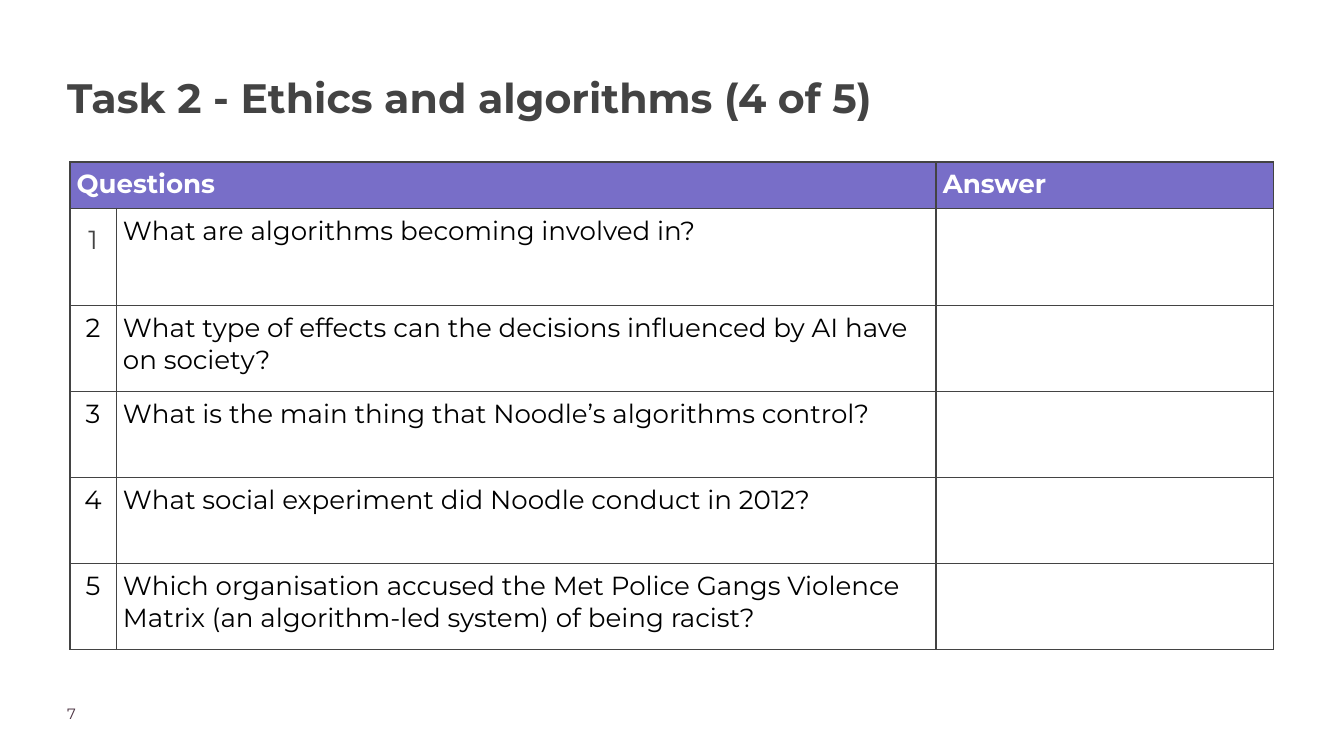
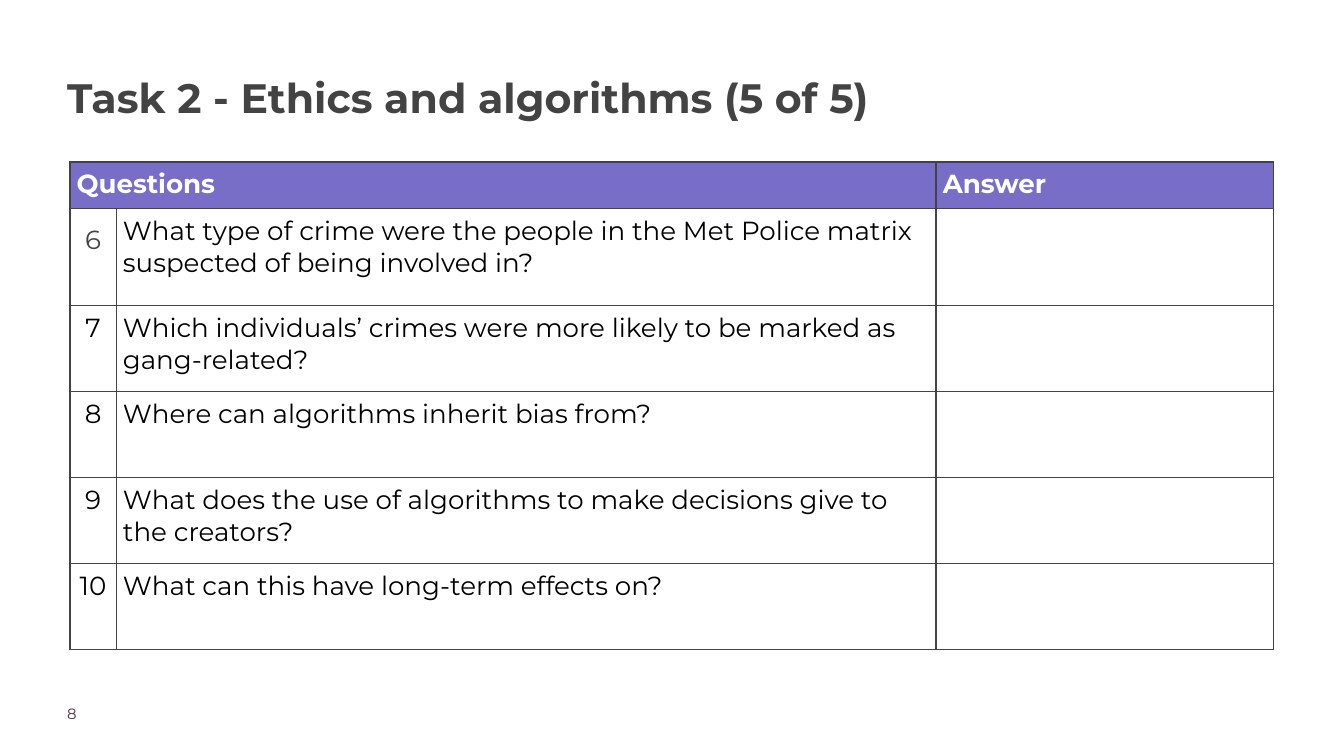
from pptx import Presentation
from pptx.dml.color import RGBColor
from pptx.enum.text import MSO_ANCHOR, MSO_AUTO_SIZE, PP_ALIGN
from pptx.oxml import parse_xml
from pptx.oxml.ns import nsdecls
from pptx.util import Inches, Pt

FONT = "Montserrat"
DARK, PLUM, PURPLE, WHITE, BLACK = "434343", "4B3241", "786EC8", "FFFFFF", "000000"
COLS = [0.69, 12.2, 5.02]
ROWS = [0.69, 1.45] + [1.28] * 4

SLIDES = [
    ("Task 2 - Ethics and algorithms (4 of 5)", 7, 1, [
        "What are algorithms becoming involved in?",
        "What type of effects can the decisions influenced by AI have on society?",
        "What is the main thing that Noodle’s algorithms control?",
        "What social experiment did Noodle conduct in 2012?",
        "Which organisation accused the Met Police Gangs Violence Matrix "
        "(an algorithm-led system) of being racist?",
    ]),
    ("Task 2 - Ethics and algorithms (5 of 5)", 8, 6, [
        "What type of crime were the people in the Met Police matrix "
        "suspected of being involved in?",
        "Which individuals’ crimes were more likely to be marked as gang-related?",
        "Where can algorithms inherit bias from?",
        "What does the use of algorithms to make decisions give to the creators?",
        "What can this have long-term effects on?",
    ]),
]


def add_text(tf, text, size, color, bold=False, align=PP_ALIGN.LEFT, spacing=1.0):
    tf.word_wrap = True
    p = tf.paragraphs[0]
    p.alignment = align
    p.line_spacing = spacing
    r = p.add_run()
    r.text = text
    r.font.name = FONT
    r.font.size = Pt(size)
    r.font.bold = bold
    r.font.color.rgb = RGBColor.from_string(color)


def place(sp, left, top, width, height):
    sp.left, sp.top = Inches(left), Inches(top)
    sp.width, sp.height = Inches(width), Inches(height)
    tf = sp.text_frame
    tf.margin_left = tf.margin_right = tf.margin_top = tf.margin_bottom = 0
    tf.auto_size = MSO_AUTO_SIZE.NONE
    tf.vertical_anchor = MSO_ANCHOR.TOP
    return tf


prs = Presentation()
prs.slide_width, prs.slide_height = Inches(20), Inches(11.25)

for title, page, first, questions in SLIDES:
    s = prs.slides.add_slide(prs.slide_layouts[5])
    tf = place(s.shapes.title, 1, 0.97, 13.63, 1.43)
    add_text(tf, title, 44, DARK, bold=True, spacing=1.15)

    tf = place(s.shapes.add_textbox(0, 0, 0, 0), 1, 10.48, 1.57, 0.39)
    add_text(tf, str(page), 16, PLUM)

    table = s.shapes.add_table(len(ROWS), len(COLS), Inches(1.04), Inches(2.41),
                               Inches(sum(COLS)), Inches(sum(ROWS))).table
    table.first_row = table.horz_banding = False
    for col, width in zip(table.columns, COLS):
        col.width = Inches(width)
    for row, height in zip(table.rows, ROWS):
        row.height = Inches(height)

    for i, row in enumerate(table.rows):
        for cell in row.cells:
            cell.margin_left = cell.margin_right = Inches(0.1)
            cell.margin_top = cell.margin_bottom = Inches(0.1)
            tcPr = cell._tc.get_or_add_tcPr()
            for side in ("lnL", "lnR", "lnT", "lnB"):
                tcPr.append(parse_xml(
                    f'<a:{side} {nsdecls("a")} w="{Pt(1.5)}"><a:solidFill>'
                    f'<a:srgbClr val="{DARK}"/></a:solidFill></a:{side}>'))
            if i == 0:
                cell.fill.solid()
                cell.fill.fore_color.rgb = RGBColor.from_string(PURPLE)
            else:
                cell.fill.background()

    table.cell(0, 0).merge(table.cell(0, 1))
    for col, heading in ((0, "Questions"), (2, "Answer")):
        add_text(table.cell(0, col).text_frame, heading, 28, WHITE, bold=True)

    for i, question in enumerate(questions, 1):
        color, spacing = (DARK, 1.3) if i == 1 else (BLACK, 1.0)
        add_text(table.cell(i, 0).text_frame, str(first + i - 1), 28, color,
                 align=PP_ALIGN.CENTER, spacing=spacing)
        add_text(table.cell(i, 1).text_frame, question, 28, BLACK)

prs.save("out.pptx")
